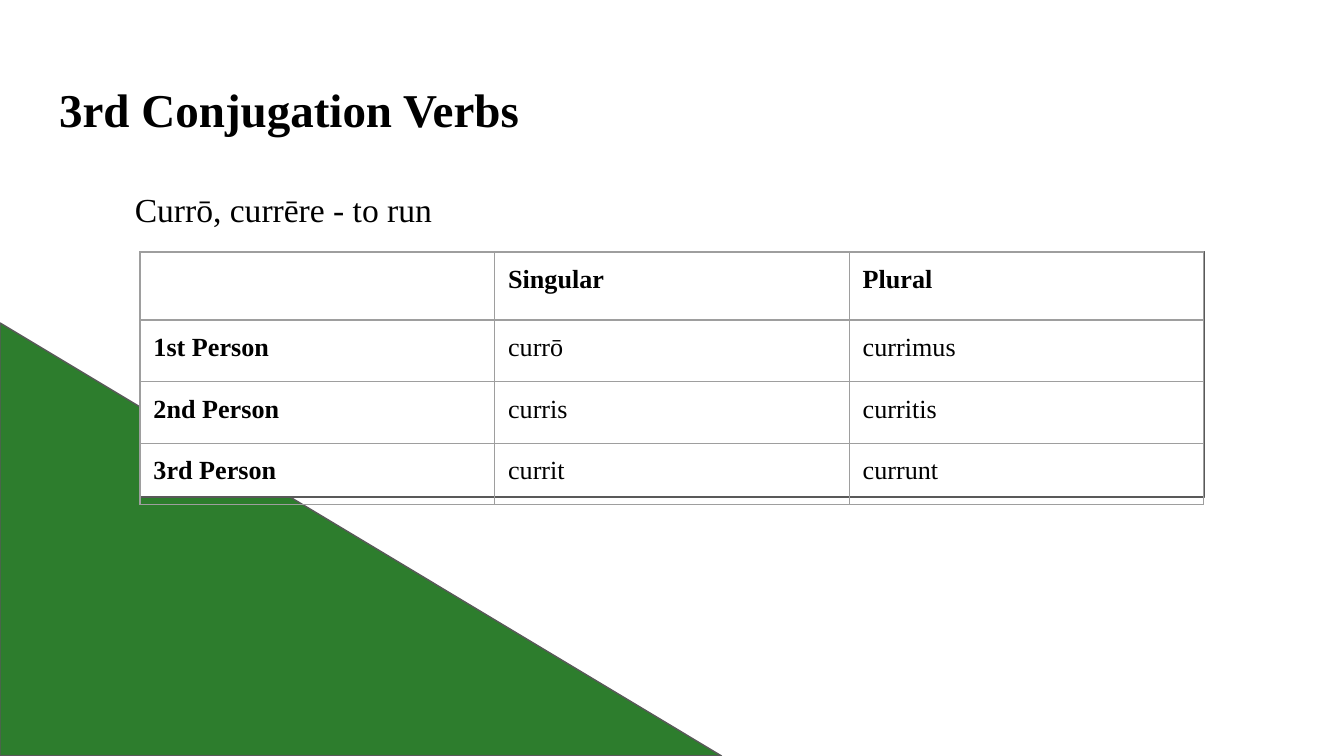
from dataclasses import dataclass

from lxml import etree
from pptx import Presentation
from pptx.dml.color import RGBColor
from pptx.enum.shapes import MSO_SHAPE
from pptx.enum.text import MSO_ANCHOR, MSO_AUTO_SIZE, PP_ALIGN
from pptx.oxml.ns import qn
from pptx.util import Pt

RECTANGLE = MSO_SHAPE.RECTANGLE
RIGHT_TRIANGLE = MSO_SHAPE.RIGHT_TRIANGLE
TOP, BOTTOM = MSO_ANCHOR.TOP, MSO_ANCHOR.BOTTOM
LEFT = PP_ALIGN.LEFT
NO_AUTOFIT = MSO_AUTO_SIZE.NONE
TITLE_ONLY = 5


@dataclass(frozen=True)
class Theme:
    font: str = "Times New Roman"
    text: str = "000000"
    paper: str = "FFFFFF"
    accent: str = "2D7D2D"
    outline: str = "595959"
    grid: str = "9E9E9E"
    title_size: float = 25.2
    body_size: float = 18
    cell_size: float = 14
    line_width: float = 0.75
    inset: float = 7.2


class Page:
    def __init__(self, deck, theme):
        self.theme = theme
        self.slide = deck.slides.add_slide(deck.slide_layouts[TITLE_ONLY])

    def add_span(self, para, text, size, bold=False):
        para.alignment = LEFT
        span = para.add_run()
        span.text = text
        span.font.name = self.theme.font
        span.font.size = Pt(size)
        span.font.bold = bold
        span.font.color.rgb = RGBColor.from_string(self.theme.text)

    def set_margins(self, target):
        target.margin_left = target.margin_right = Pt(self.theme.inset)
        target.margin_top = target.margin_bottom = Pt(self.theme.inset)

    def prepare(self, frame, anchor):
        frame.word_wrap = True
        frame.auto_size = NO_AUTOFIT
        frame.vertical_anchor = anchor
        self.set_margins(frame)
        return frame.paragraphs[0]

    def title(self, text, left, top, width, height):
        box = self.slide.shapes.title
        box.left, box.top, box.width, box.height = map(Pt, (left, top, width, height))
        para = self.prepare(box.text_frame, BOTTOM)
        self.add_span(para, text, self.theme.title_size, bold=True)

    def text(self, text, left, top, width, height):
        box = self.slide.shapes.add_textbox(*map(Pt, (left, top, width, height)))
        para = self.prepare(box.text_frame, TOP)
        para.line_spacing = 1.15
        para.space_after = Pt(12)
        self.add_span(para, text, self.theme.body_size)

    def shape(self, kind, fill, left, top, width, height):
        shape = self.slide.shapes.add_shape(kind, *map(Pt, (left, top, width, height)))
        shape.shadow.inherit = False
        shape.fill.solid()
        shape.fill.fore_color.rgb = RGBColor.from_string(fill)
        shape.line.color.rgb = RGBColor.from_string(self.theme.outline)
        shape.line.width = Pt(self.theme.line_width)

    def border(self, cell):
        properties = cell._tc.get_or_add_tcPr()
        for side in ("a:lnL", "a:lnR", "a:lnT", "a:lnB"):
            line = etree.SubElement(properties, qn(side), w=str(Pt(self.theme.line_width)))
            fill = etree.SubElement(line, qn("a:solidFill"))
            etree.SubElement(fill, qn("a:srgbClr"), val=self.theme.grid)

    def table(self, rows, left, top, width, heights):
        frame = self.slide.shapes.add_table(
            len(rows), len(rows[0]), Pt(left), Pt(top), Pt(width), Pt(sum(heights)))
        table = frame.table
        table.first_row = table.horz_banding = False
        for row, height in zip(table.rows, heights):
            row.height = Pt(height)
        for r, row in enumerate(rows):
            for c, text in enumerate(row):
                cell = table.cell(r, c)
                self.set_margins(cell)
                self.border(cell)
                cell.fill.background()
                if text:
                    para = cell.text_frame.paragraphs[0]
                    self.add_span(para, text, self.theme.cell_size, bold=r == 0 or c == 0)


def main():
    deck = Presentation()
    deck.slide_width, deck.slide_height = Pt(720), Pt(405)
    theme = Theme()
    page = Page(deck, theme)

    # Corner decoration and the panel behind the table
    page.shape(RIGHT_TRIANGLE, theme.accent, 0, 173, 386.5, 232)
    page.shape(RECTANGLE, theme.paper, 75, 134.7, 570.3, 131.7)

    # Heading and the verb
    page.title("3rd Conjugation Verbs", 24.5, 35.4, 671, 45.4)
    page.text("Currō, currēre - to run", 65.1, 90.7, 630.4, 40)

    # Present tense endings
    endings = [
        ("", "Singular", "Plural"),
        ("1st Person", "currō", "currimus"),
        ("2nd Person", "curris", "curritis"),
        ("3rd Person", "currit", "currunt"),
    ]
    page.table(endings, 75, 135, 570, [34.9, 33, 33, 33])

    deck.save("out.pptx")


if __name__ == "__main__":
    main()
